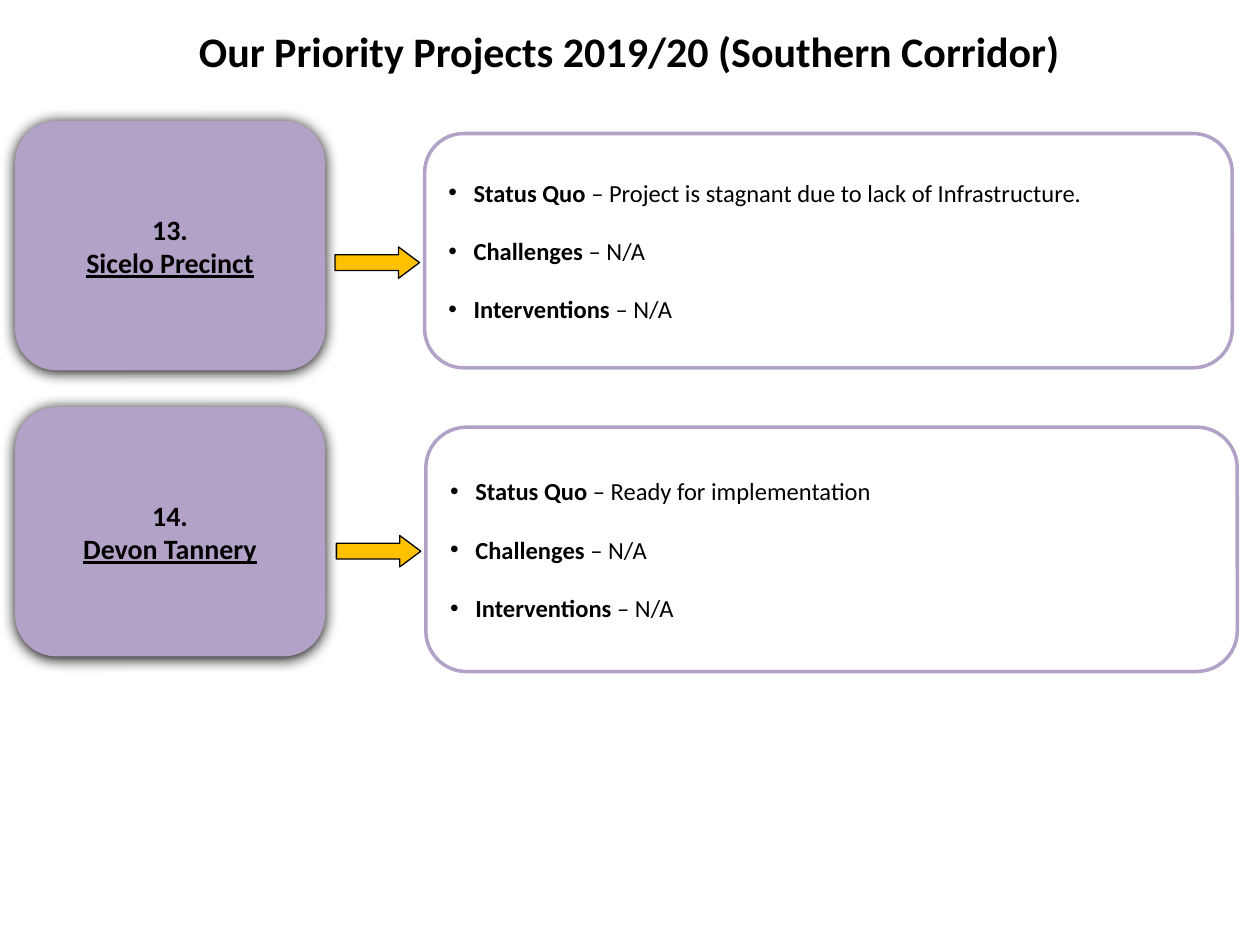
"""Build the Southern Corridor priority projects slide."""
from dataclasses import dataclass

from lxml import etree
from pptx import Presentation
from pptx.dml.color import RGBColor
from pptx.enum.shapes import MSO_SHAPE
from pptx.enum.text import MSO_ANCHOR, PP_ALIGN
from pptx.oxml.ns import qn
from pptx.util import Inches, Pt

ROUNDED, ARROW = MSO_SHAPE.ROUNDED_RECTANGLE, MSO_SHAPE.RIGHT_ARROW
LEFT, CENTER, MIDDLE = PP_ALIGN.LEFT, PP_ALIGN.CENTER, MSO_ANCHOR.MIDDLE
BLACK = RGBColor(0x00, 0x00, 0x00)
WHITE = RGBColor(0xFF, 0xFF, 0xFF)
LILAC = RGBColor(0xB3, 0xA2, 0xC7)
AMBER = RGBColor(0xFF, 0xC0, 0x00)
FONT = "Calibri"
WIDTH, HEIGHT = Inches(10), Inches(7.5)


@dataclass(frozen=True)
class Area:
    """A rectangle in percent of the slide's width and height."""
    left: float
    top: float
    width: float
    height: float

    def emu(self) -> tuple[int, int, int, int]:
        """Return left, top, width and height in EMU."""
        return (int(WIDTH * self.left / 100), int(HEIGHT * self.top / 100),
                int(WIDTH * self.width / 100), int(HEIGHT * self.height / 100))


@dataclass(frozen=True)
class Project:
    """A numbered project with its status and the places of its parts."""
    number: str
    name: str
    status: str
    label: Area
    arrow: Area
    details: Area


PROJECTS = (
    Project("13.", "Sicelo Precinct",
            "– Project is stagnant due to lack of Infrastructure.",
            Area(1.2, 12.8, 24.6, 26.4), Area(26.6, 26.13, 6.7, 3.33),
            Area(33.7, 14.13, 64.1, 24.8)),
    Project("14.", "Devon Tannery", "– Ready for implementation",
            Area(1.2, 43.07, 24.6, 26.4), Area(26.7, 56.67, 6.7, 3.33),
            Area(33.8, 45.2, 64.4, 25.87)),
)


def add_run(p, text: str, size: float, bold: bool, underline: bool = False) -> None:
    """Add one formatted run to a paragraph."""
    r = p.add_run()
    r.text = text
    r.font.name, r.font.size = FONT, Pt(size)
    r.font.bold = bold
    if underline:
        r.font.underline = True
    r.font.color.rgb = BLACK


def add_box(s, kind, area: Area, fill: RGBColor, line: RGBColor | None = None,
            weight: float = 0):
    """Add a filled preset shape, with an outline when a colour is given."""
    sp = s.shapes.add_shape(kind, *area.emu())
    sp.shadow.inherit = False
    sp.fill.solid()
    sp.fill.fore_color.rgb = fill
    if line is None:
        sp.line.fill.background()
    else:
        sp.line.color.rgb = line
        sp.line.width = Pt(weight)
    sp.text_frame.word_wrap = True
    sp.text_frame.vertical_anchor = MIDDLE
    return sp


def add_shadow(sp) -> None:
    """Give a shape a soft black shadow that falls downwards."""
    effects = sp._element.spPr.find(qn("a:effectLst"))
    shadow = etree.SubElement(effects, qn("a:outerShdw"), blurRad=str(Pt(8.5)),
                              dist=str(Pt(1)), dir="5400000", rotWithShape="0")
    etree.SubElement(shadow, qn("a:srgbClr"), val=str(BLACK))


def add_bullet(p) -> None:
    """Give a paragraph a hanging bullet."""
    pPr = p._p.get_or_add_pPr()
    pPr.set("marL", str(Inches(0.2)))
    pPr.set("indent", str(-Inches(0.2)))
    etree.SubElement(pPr, qn("a:buFont"), typeface="Arial")
    etree.SubElement(pPr, qn("a:buChar"), char="•")


def add_label(s, project: Project) -> None:
    """Draw the lilac card with a project's number and name."""
    sp = add_box(s, ROUNDED, project.label, LILAC)
    add_shadow(sp)
    tf = sp.text_frame
    p = tf.paragraphs[0]
    p.alignment = CENTER
    add_run(p, project.number, 16, True)
    p = tf.add_paragraph()
    p.alignment = CENTER
    add_run(p, project.name, 16, True, underline=True)


def add_details(s, project: Project) -> None:
    """Draw the outlined card with a project's bulleted details."""
    tf = add_box(s, ROUNDED, project.details, WHITE, LILAC, 2).text_frame
    rows = (("Status Quo ", project.status), ("Challenges", " – N/A"),
            ("Interventions", " – N/A"))
    for i, (heading, text) in enumerate(rows):
        p = tf.add_paragraph() if i else tf.paragraphs[0]
        add_bullet(p)
        p.alignment = LEFT
        if i:
            p.space_before = Pt(16.5)
        add_run(p, heading, 14, True)
        add_run(p, text, 14, False)


def add_arrow(s, area: Area) -> None:
    """Draw the amber arrow from a label to its details."""
    sp = add_box(s, ARROW, area, AMBER, BLACK, 0.75)
    sp.adjustments[1] = 0.67


def add_title(s, text: str) -> None:
    """Place and format the title placeholder."""
    sp = s.shapes.title
    sp.left, sp.top, sp.width, sp.height = Area(1.8, 2, 96.3, 6.8).emu()
    sp.fill.solid()
    sp.fill.fore_color.rgb = WHITE
    tf = sp.text_frame
    tf.word_wrap = True
    tf.vertical_anchor = MIDDLE
    p = tf.paragraphs[0]
    p.alignment = CENTER
    add_run(p, text, 24, True)


def main() -> None:
    """Build and save the presentation."""
    prs = Presentation()
    prs.slide_width, prs.slide_height = WIDTH, HEIGHT
    s = prs.slides.add_slide(prs.slide_layouts[5])
    add_title(s, "Our Priority Projects 2019/20 (Southern Corridor)")
    for project in PROJECTS:
        add_arrow(s, project.arrow)
        add_details(s, project)
        add_label(s, project)
    prs.save("out.pptx")


if __name__ == "__main__":
    main()
